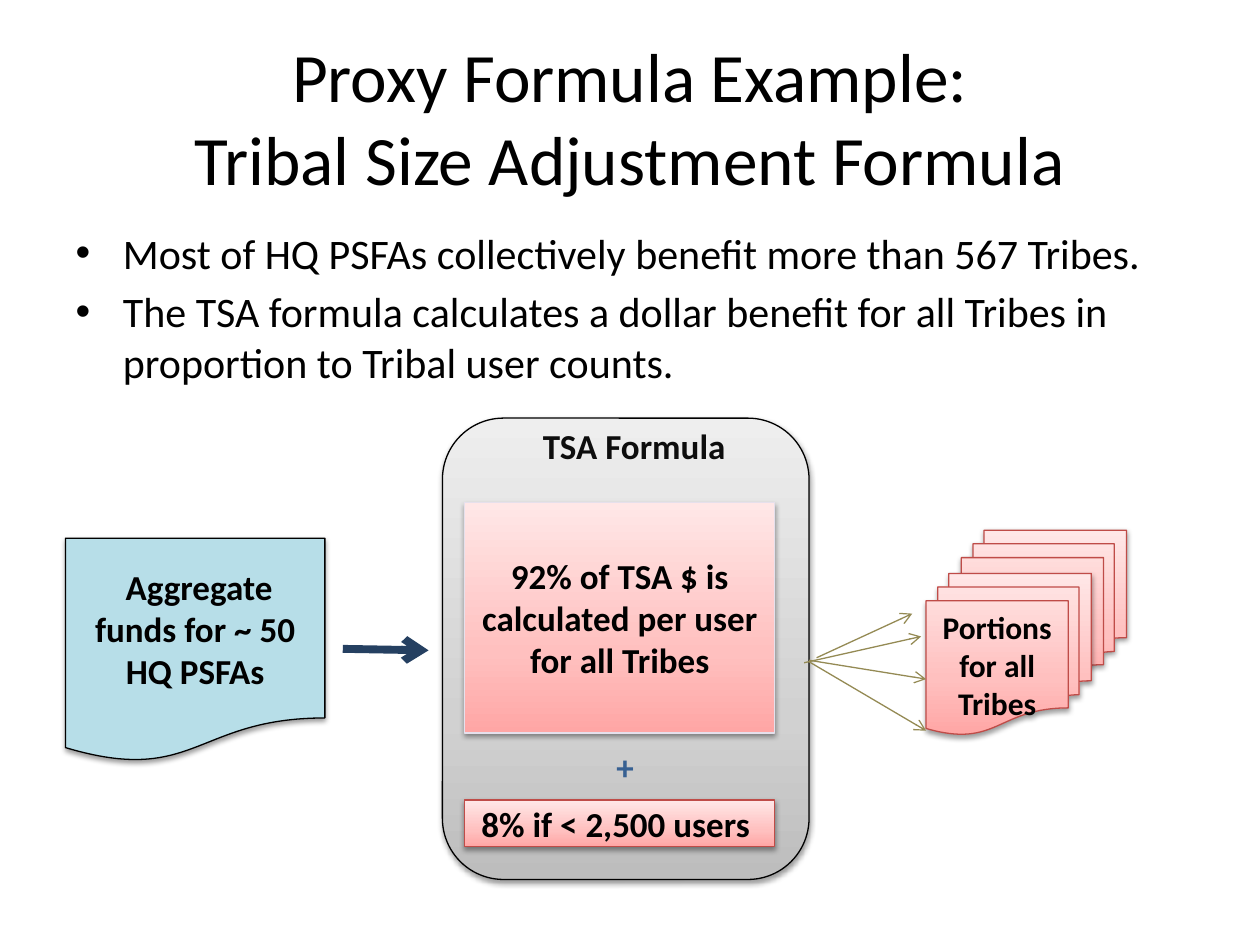
from copy import deepcopy

from lxml.etree import SubElement
from pptx import Presentation
from pptx.dml.color import RGBColor
from pptx.enum.shapes import MSO_CONNECTOR, MSO_SHAPE
from pptx.enum.text import MSO_ANCHOR, PP_ALIGN
from pptx.oxml.ns import qn
from pptx.util import Cm, Pt

FONT = "Calibri"
TITLE = "Proxy Formula Example:\vTribal Size Adjustment Formula"
BULLETS = [
    "Most of HQ PSFAs collectively benefit more than 567 Tribes.",
    "The TSA formula calculates a dollar benefit for all Tribes in "
    "proportion to Tribal user counts.",
]

# Gradients run from the bottom of a shape to its top
GREY = ["BDBDBD", "D1D1D1", "EEEEEE"]
PINK = ["FFA6A5", "FFC0BF", "FFE7E7"]
GRADIENT_POSITIONS = [0, 0.35, 1]

# Boxes are left, top, width, height in centimetres
TITLE_BOX = (1.27, 0.76, 22.86, 3.18)
BODY_BOX = (1.27, 4.45, 22.86, 12.57)
# preset, box, fill, line colour, text, text size
SHAPES = [
    (MSO_SHAPE.ROUNDED_RECTANGLE, (8.92, 8.43, 7.39, 9.3), GREY, "000000", "", 20),
    (MSO_SHAPE.RECTANGLE, (9.37, 10.13, 6.25, 4.65), PINK, "E6E0EC",
     "92% of TSA $ is calculated per user for all Tribes", 20),
    (MSO_SHAPE.RECTANGLE, (9.37, 16.13, 6.25, 0.94), PINK, "BF4C48",
     "8% if < 2,500 users ", 20),
    (MSO_SHAPE.FLOWCHART_DOCUMENT, (1.32, 10.85, 5.23, 4.52), "B7DEE8", "000000",
     " Aggregate funds for ~ 50 HQ PSFAs", 20),
    (MSO_SHAPE.FLOWCHART_MULTIDOCUMENT, (19.38, 10.69, 3.33, 3.25), PINK, "BF4C48", "", 18),
    (MSO_SHAPE.FLOWCHART_MULTIDOCUMENT, (18.67, 11.56, 3.33, 3.25), PINK, "BF4C48",
     "Portions for all Tribes", 18),
]
LABELS = [
    ("TSA Formula", (9.09, 8.43, 7.39, 1.65), "0D0D0D"),
    ("+", (11.43, 14.91, 2.34, 0.81), "376092"),
]
# start x, start y, end x, end y, colour, width
ARROWS = [
    (6.91, 13.08, 8.64, 13.11, "254061", 4.5),
    (16.21, 13.36, 18.57, 12.83, "948A54", 0.75),
    (16.31, 13.34, 18.67, 14.73, "948A54", 0.75),
    (16.46, 13.26, 18.39, 12.37, "948A54", 0.75),
    (16.31, 13.31, 18.67, 13.69, "948A54", 0.75),
]


def color(hex_value):
    return RGBColor.from_string(hex_value)


def lengths(values):
    return [Cm(value) for value in values]


def place(shape, box):
    shape.left, shape.top, shape.width, shape.height = lengths(box)


def style(paragraph, size, hex_value="000000", bold=False):
    font = paragraph.font
    font.name, font.size, font.bold = FONT, Pt(size), bold
    font.color.rgb = color(hex_value)


def fill_shape(shape, fill):
    """Apply one colour, or a list of three gradient colours."""
    if isinstance(fill, str):
        shape.fill.solid()
        shape.fill.fore_color.rgb = color(fill)
        return
    shape.fill.gradient()
    shape.fill.gradient_angle = 90
    stop_list = shape._element.spPr.find(".//" + qn("a:gsLst"))
    stop_list.append(deepcopy(stop_list[-1]))
    for stop, position, hex_value in zip(shape.fill.gradient_stops, GRADIENT_POSITIONS, fill):
        stop.position = position
        stop.color.rgb = color(hex_value)


def add_shadow(shape):
    shape.shadow.inherit = False
    effects = shape._element.spPr.find(qn("a:effectLst"))
    shadow = SubElement(effects, qn("a:outerShdw"), blurRad=str(Pt(3.1)), dist=str(Pt(1.6)),
                        dir="5400000", rotWithShape="0")
    shade = SubElement(shadow, qn("a:srgbClr"), val="000000")
    SubElement(shade, qn("a:alpha"), val="38000")


def add_box(slide, preset, box, fill, line, text, size):
    shape = slide.shapes.add_shape(preset, *lengths(box))
    fill_shape(shape, fill)
    shape.line.color.rgb = color(line)
    shape.line.width = Pt(0.75)
    add_shadow(shape)
    if text:
        frame = shape.text_frame
        frame.text = text
        frame.word_wrap = True
        frame.vertical_anchor = MSO_ANCHOR.MIDDLE
        frame.paragraphs[0].alignment = PP_ALIGN.CENTER
        style(frame.paragraphs[0], size, bold=True)


def add_label(slide, text, box, hex_value):
    frame = slide.shapes.add_textbox(*lengths(box)).text_frame
    frame.word_wrap = True
    frame.text = text
    paragraph = frame.paragraphs[0]
    paragraph.alignment = PP_ALIGN.CENTER
    paragraph.space_before = Pt(4)
    style(paragraph, 20, hex_value, bold=True)


def add_arrow(slide, *arrow):
    *ends, hex_value, width = arrow
    connector = slide.shapes.add_connector(MSO_CONNECTOR.STRAIGHT, *lengths(ends))
    connector.line.color.rgb = color(hex_value)
    connector.line.width = Pt(width)
    properties = connector._element.spPr
    SubElement(properties.find(qn("a:ln")), qn("a:tailEnd"), type="arrow")
    SubElement(properties, qn("a:effectLst"))


def main():
    presentation = Presentation()
    presentation.slide_width, presentation.slide_height = Cm(25.4), Cm(19.05)
    slide = presentation.slides.add_slide(presentation.slide_layouts[1])

    title, body = slide.placeholders
    place(title, TITLE_BOX)
    title.text_frame.text = TITLE
    style(title.text_frame.paragraphs[0], 39.6)

    place(body, BODY_BOX)
    body.text_frame.text = "\n".join(BULLETS)
    for paragraph in body.text_frame.paragraphs:
        style(paragraph, 24)

    for shape in SHAPES:
        add_box(slide, *shape)
    for label in LABELS:
        add_label(slide, *label)
    for arrow in ARROWS:
        add_arrow(slide, *arrow)

    presentation.save("out.pptx")


if __name__ == "__main__":
    main()
